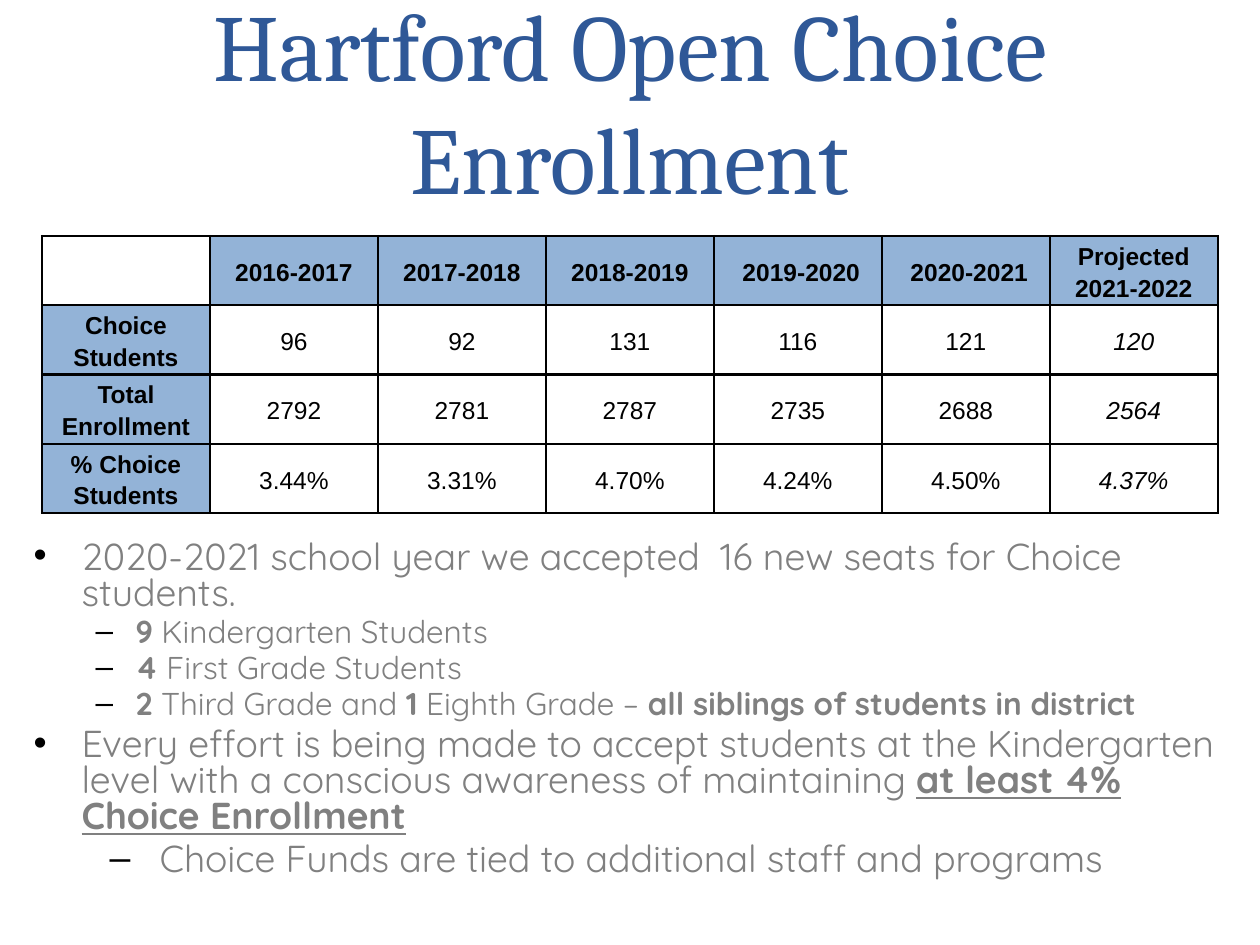
"""Build the Hartford Open Choice Enrollment slide."""
import pptx
import pptx.dml.color
import pptx.enum.text
import pptx.oxml
import pptx.oxml.ns
import pptx.util

PX = 914400 // 126
COLORS = {"title": "2F5897", "body": "808080", "header": "93B3D7", "ink": "000000"}

TITLE = "Hartford Open Choice Enrollment"
ENROLLMENT = [
    ["", "2016-2017", "2017-2018", "2018-2019", " 2019-2020", " 2020-2021", "Projected 2021-2022"],
    ["Choice Students", "96", "92", "131", "116", "121", "120"],
    ["Total Enrollment", "2792", "2781", "2787", "2735", "2688", "2564"],
    ["% Choice Students", "3.44%", "3.31%", "4.70%", "4.24%", "4.50%", "4.37%"],
]
STYLES = {
    "point": dict(level=0, size=21.4, left=48, hang=48, before=4.1, bullet="•"),
    "count": dict(level=1, size=18, left=102, hang=40, before=3.4, bullet="–"),
    "funds": dict(level=1, size=21.4, left=126, hang=50, before=4.1, bullet="–"),
}
POINTS = [
    ("point", [("2020-2021 school year we accepted  16 new seats for Choice students.", "")]),
    ("count", [("9", "b"), (" Kindergarten Students", "")]),
    ("count", [("4", "b"), (" First Grade Students", "")]),
    ("count", [("2", "b"), (" Third Grade and ", ""), ("1", "b"), (" Eighth Grade – ", ""),
               ("all siblings of students in district", "b")]),
    ("point", [("Every effort is being made to accept students at the Kindergarten level "
                "with a conscious awareness of maintaining ", ""),
               ("at least 4% Choice Enrollment", "bu")]),
    ("funds", [("Choice Funds are tied to additional staff and programs", "")]),
]


def px(length):
    return pptx.util.Emu(length * PX)


def place(holder, left, top, width, height):
    holder.left, holder.top, holder.width, holder.height = map(px, (left, top, width, height))
    holder.text_frame.word_wrap = True
    holder.text_frame.auto_size = pptx.enum.text.MSO_AUTO_SIZE.NONE


def set_font(font, name, size, color):
    font.name, font.size = name, pptx.util.Pt(size)
    font.color.rgb = pptx.dml.color.RGBColor.from_string(COLORS[color])


def append_xml(parent, tag, content):
    namespace = pptx.oxml.ns.nsdecls("a")
    parent.append(pptx.oxml.parse_xml(f"<a:{tag} {namespace} {content}"))


def add_title(slide):
    title = slide.shapes.title
    place(title, 63, 21, 1134, 158)
    title.text_frame.vertical_anchor = pptx.enum.text.MSO_ANCHOR.MIDDLE
    title.text_frame.text = TITLE
    heading = title.text_frame.paragraphs[0]
    heading.alignment = pptx.enum.text.PP_ALIGN.CENTER
    set_font(heading.font, "Cambria", 54, "title")


def add_points(slide):
    body = slide.placeholders[1]
    place(body, 21, 535, 1207, 325)
    for index, (kind, runs) in enumerate(POINTS):
        style = STYLES[kind]
        frame = body.text_frame
        point = frame.add_paragraph() if index else frame.paragraphs[0]
        point.level = style["level"]
        point.line_spacing = 0.8
        point.space_before = pptx.util.Pt(style["before"] if index else 0)
        properties = point._p.get_or_add_pPr()
        properties.set("marL", str(px(style["left"])))
        properties.set("indent", str(px(-style["hang"])))
        append_xml(properties, "buClr", f'><a:srgbClr val="{COLORS["ink"]}"/></a:buClr>')
        append_xml(properties, "buChar", f'char="{style["bullet"]}"/>')
        set_font(point.font, "Quicksand", style["size"], "body")
        for text, marks in runs:
            run = point.add_run()
            run.text = text
            if "b" in marks:
                run.font.bold = True
            if "u" in marks:
                run.font.underline = True


def format_cell(cell, text, is_header, is_projected):
    cell.margin_left = cell.margin_right = px(4)
    cell.margin_top = cell.margin_bottom = px(3)
    cell.vertical_anchor = pptx.enum.text.MSO_ANCHOR.MIDDLE
    for side in ("lnL", "lnR", "lnT", "lnB"):
        append_xml(cell._tc.get_or_add_tcPr(), side,
                   f'w="{pptx.util.Pt(1.5)}"><a:solidFill><a:srgbClr val="{COLORS["ink"]}"/>'
                   f'</a:solidFill></a:{side}>')
    if is_header and text:
        cell.fill.solid()
        cell.fill.fore_color.rgb = pptx.dml.color.RGBColor.from_string(COLORS["header"])
    else:
        cell.fill.background()
    cell.text = text
    entry = cell.text_frame.paragraphs[0]
    entry.alignment = pptx.enum.text.PP_ALIGN.CENTER
    entry.line_spacing = 1.15
    set_font(entry.font, "Arial", 14, "ink")
    entry.font.bold = is_header
    entry.font.italic = is_projected and not is_header


def add_enrollment(slide):
    row_count, column_count = len(ENROLLMENT), len(ENROLLMENT[0])
    table = slide.shapes.add_table(row_count, column_count, px(42), px(236),
                                   px(168 * column_count), px(66 * row_count)).table
    table.first_row = table.horz_banding = False
    for r, row in enumerate(ENROLLMENT):
        for c, text in enumerate(row):
            format_cell(table.cell(r, c), text, r == 0 or c == 0, c == column_count - 1)


def main():
    deck = pptx.Presentation()
    deck.slide_width, deck.slide_height = px(1260), px(945)
    slide = deck.slides.add_slide(deck.slide_layouts[1])
    add_points(slide)
    add_title(slide)
    add_enrollment(slide)
    deck.save("out.pptx")


if __name__ == "__main__":
    main()
